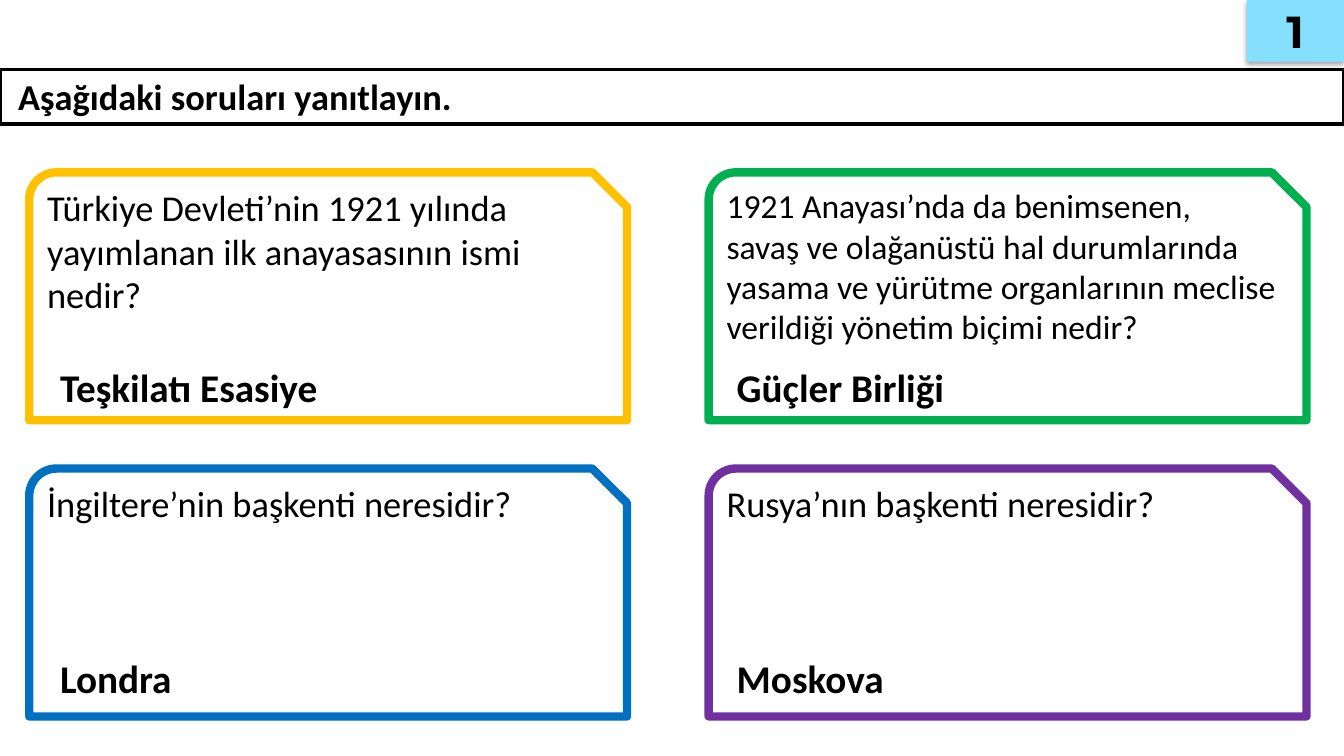
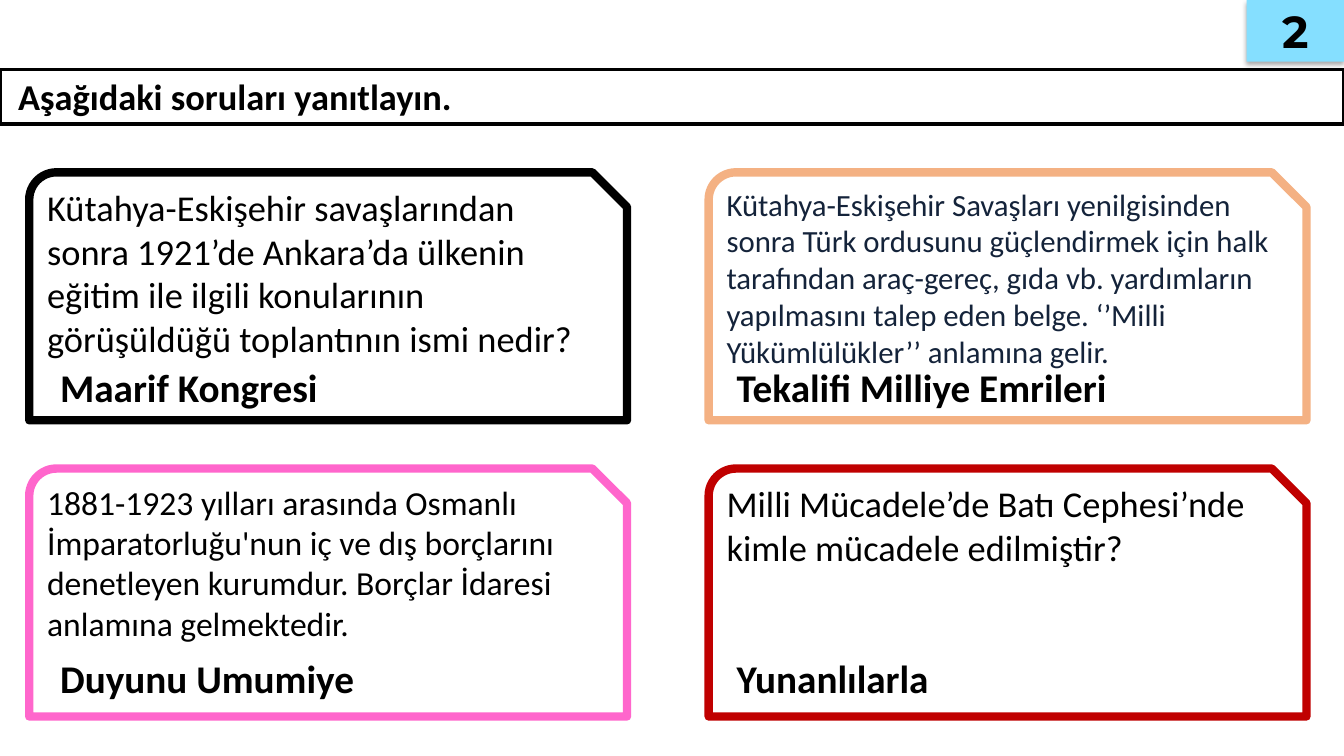
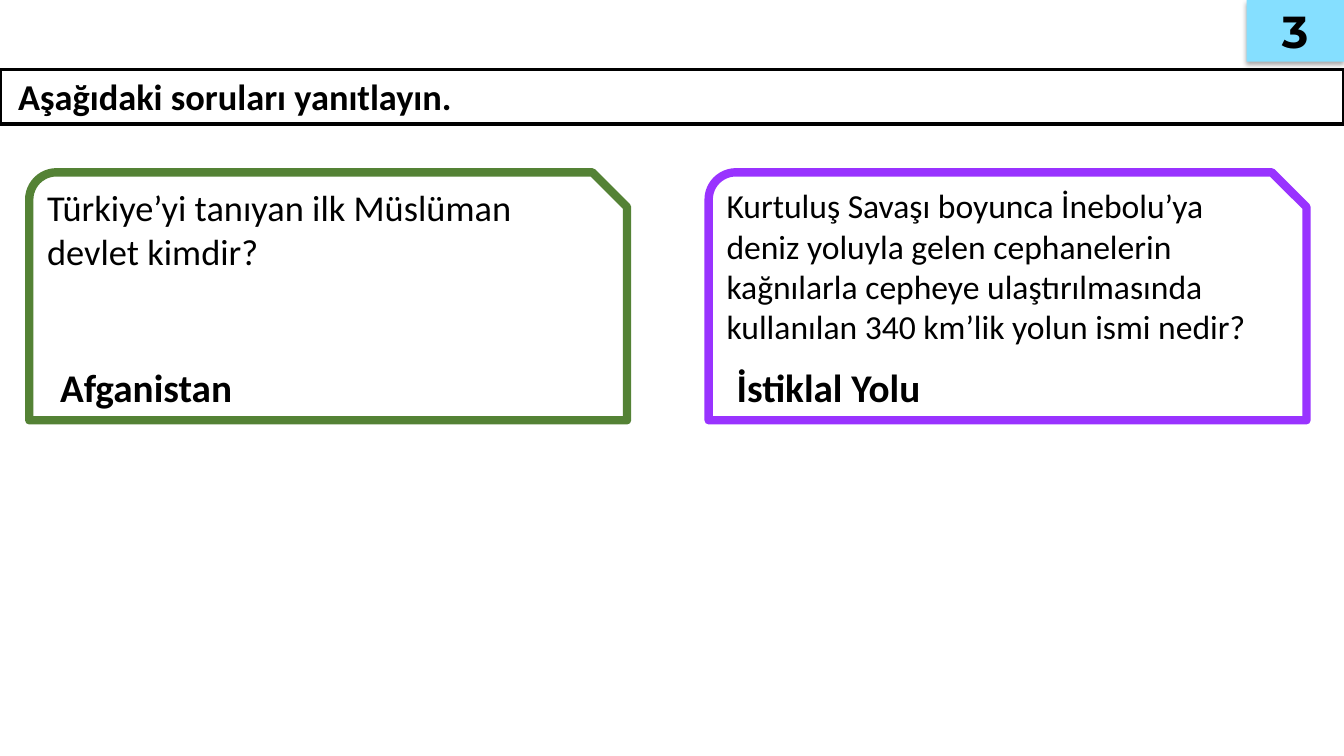
from dataclasses import dataclass

from lxml import etree
from pptx import Presentation, util as u
from pptx.dml.color import RGBColor
from pptx.enum import shapes, text
from pptx.oxml import ns


@dataclass(frozen=True)
class Theme:
    """Colours, fonts and type sizes that the slides share."""
    ink: str = "000000"
    navy: str = "14233A"
    badge: str = "85DFFF"
    body_font: str = "Calibri"
    badge_font: str = "Montserrat"
    large: int = 26
    medium: int = 24
    small: int = 22
    answer: int = 28
    number: int = 32
    band_line: float = 2.25
    card_line: float = 6


@dataclass(frozen=True)
class Card:
    """A question with its answer, outline colour and type."""
    question: str
    answer: str
    outline: str
    size: int = Theme.large
    colour: str = Theme.ink


@dataclass(frozen=True)
class Box:
    """A place on the slide, in points."""
    left: float
    top: float
    width: float
    height: float

    def lengths(self):
        """Return the four lengths that python-pptx expects."""
        return [u.Pt(n) for n in (self.left, self.top, self.width, self.height)]


THEME = Theme()
PAGE_WIDTH, PAGE_HEIGHT = 960, 540
BAND = Box(0, 49.7, PAGE_WIDTH, 38.9)
BADGE = Box(890.4, 0, 69.6, 44)
FIRST_CARD = Box(20.9, 123.1, 427, 177.1)
COLUMN_STEP, ROW_STEP = 485.3, 211.6
ANSWER_INSETS = (15, 13)
ANSWER_DROPS = (132.5, 129)
ANSWER_HEIGHT = 41.2
TITLE = " Aşağıdaki soruları yanıtlayın."

SLIDES = [
    [
        Card("Türkiye Devleti’nin 1921 yılında\nyayımlanan ilk anayasasının ismi nedir?",
             "Teşkilatı Esasiye", "FFC000"),
        Card("1921 Anayası’nda da benimsenen,\nsavaş ve olağanüstü hal durumlarında "
             "yasama ve yürütme organlarının meclise verildiği yönetim biçimi nedir?",
             "Güçler Birliği", "00B050", THEME.medium),
        Card("İngiltere’nin başkenti neresidir?", "Londra", "0070C0"),
        Card("Rusya’nın başkenti neresidir?", "Moskova", "7030A0"),
    ],
    [
        Card("Kütahya-Eskişehir savaşlarından sonra 1921’de Ankara’da ülkenin eğitim "
             "ile ilgili konularının görüşüldüğü toplantının ismi nedir?",
             "Maarif Kongresi", "000000"),
        Card("Kütahya-Eskişehir Savaşları yenilgisinden sonra Türk ordusunu "
             "güçlendirmek için halk tarafından araç-gereç, gıda vb. yardımların "
             "yapılmasını talep eden belge. ‘’Milli Yükümlülükler’’ anlamına gelir.",
             "Tekalifi Milliye Emrileri", "F4B183", THEME.small, THEME.navy),
        Card("1881-1923 yılları arasında Osmanlı İmparatorluğu'nun iç ve dış borçlarını "
             "denetleyen kurumdur. Borçlar İdaresi anlamına gelmektedir.",
             "Duyunu Umumiye", "FF66CC", THEME.medium),
        Card("Milli Mücadele’de Batı Cephesi’nde\nkimle mücadele edilmiştir?",
             "Yunanlılarla", "C00000"),
    ],
    [
        Card("Türkiye’yi tanıyan ilk Müslüman devlet kimdir?", "Afganistan", "548235"),
        Card("Kurtuluş Savaşı boyunca İnebolu’ya deniz yoluyla gelen cephanelerin "
             "kağnılarla cepheye ulaştırılmasında kullanılan 340 km’lik yolun ismi nedir?",
             "İstiklal Yolu", "9933FF", THEME.medium),
    ],
]


def write(shape, words, size, bold=False, colour=THEME.ink, font=THEME.body_font,
          align=text.PP_ALIGN.LEFT, anchor=text.MSO_ANCHOR.TOP):
    """Fill a shape with one styled paragraph."""
    frame = shape.text_frame
    frame.word_wrap = True
    frame.vertical_anchor = anchor
    para = frame.paragraphs[0]
    para.text = words
    para.alignment = align
    para.font.name = font
    para.font.size = u.Pt(size)
    para.font.bold = bold
    para.font.color.rgb = RGBColor.from_string(colour)


def add_outline(page, kind, box, colour, weight):
    """Add an unfilled shape with a coloured line."""
    shape = page.shapes.add_shape(kind, *box.lengths())
    shape.shadow.inherit = False
    shape.fill.background()
    shape.line.color.rgb = RGBColor.from_string(colour)
    shape.line.width = u.Pt(weight)
    return shape


def add_soft_shadow(shape):
    """Give a shape a faint shadow straight below it."""
    shape.shadow.inherit = False
    effects = shape._element.spPr.find(ns.qn("a:effectLst"))
    shadow = etree.SubElement(effects, ns.qn("a:outerShdw"), blurRad=str(u.Pt(3.5)),
                              dist=str(u.Pt(2.2)), dir="5400000", rotWithShape="0")
    colour = etree.SubElement(shadow, ns.qn("a:srgbClr"), val=THEME.ink)
    etree.SubElement(colour, ns.qn("a:alpha"), val="32000")


def add_band(page, box):
    """Add the instruction band."""
    band = add_outline(page, shapes.MSO_SHAPE.RECTANGLE, box, THEME.ink, THEME.band_line)
    write(band, TITLE, THEME.large, bold=True)


def add_badge(page, box, number):
    """Add the numbered corner badge."""
    badge = page.shapes.add_shape(shapes.MSO_SHAPE.RECTANGLE, *box.lengths())
    badge.fill.solid()
    badge.fill.fore_color.rgb = RGBColor.from_string(THEME.badge)
    badge.line.fill.background()
    add_soft_shadow(badge)
    write(badge, str(number), THEME.number, bold=True, font=THEME.badge_font,
          align=text.PP_ALIGN.CENTER, anchor=text.MSO_ANCHOR.MIDDLE)


def add_card(page, box, card, inset, drop):
    """Add a question frame with its answer near the bottom."""
    frame = add_outline(page, shapes.MSO_SHAPE.SNIP_ROUND_RECTANGLE, box,
                        card.outline, THEME.card_line)
    frame.adjustments[0] = 0.11
    frame.adjustments[1] = 0.14
    write(frame, card.question, card.size, colour=card.colour)
    place = Box(box.left + inset, box.top + drop, box.width - 2 * inset, ANSWER_HEIGHT)
    answer = page.shapes.add_textbox(*place.lengths())
    write(answer, card.answer, THEME.answer, bold=True)


def add_question_slide(deck, number, cards):
    """Add a slide with a band, a badge and a two-column grid of cards."""
    page = deck.slides.add_slide(deck.slide_layouts[6])
    add_band(page, BAND)
    for index, card in enumerate(cards):
        row, column = divmod(index, 2)
        box = Box(FIRST_CARD.left + column * COLUMN_STEP, FIRST_CARD.top + row * ROW_STEP,
                  FIRST_CARD.width, FIRST_CARD.height)
        add_card(page, box, card, ANSWER_INSETS[column], ANSWER_DROPS[row])
    add_badge(page, BADGE, number)


def main():
    """Build and save the deck."""
    deck = Presentation()
    deck.slide_width, deck.slide_height = u.Pt(PAGE_WIDTH), u.Pt(PAGE_HEIGHT)
    for number, cards in enumerate(SLIDES, start=1):
        add_question_slide(deck, number, cards)
    deck.save("out.pptx")


if __name__ == "__main__":
    main()
